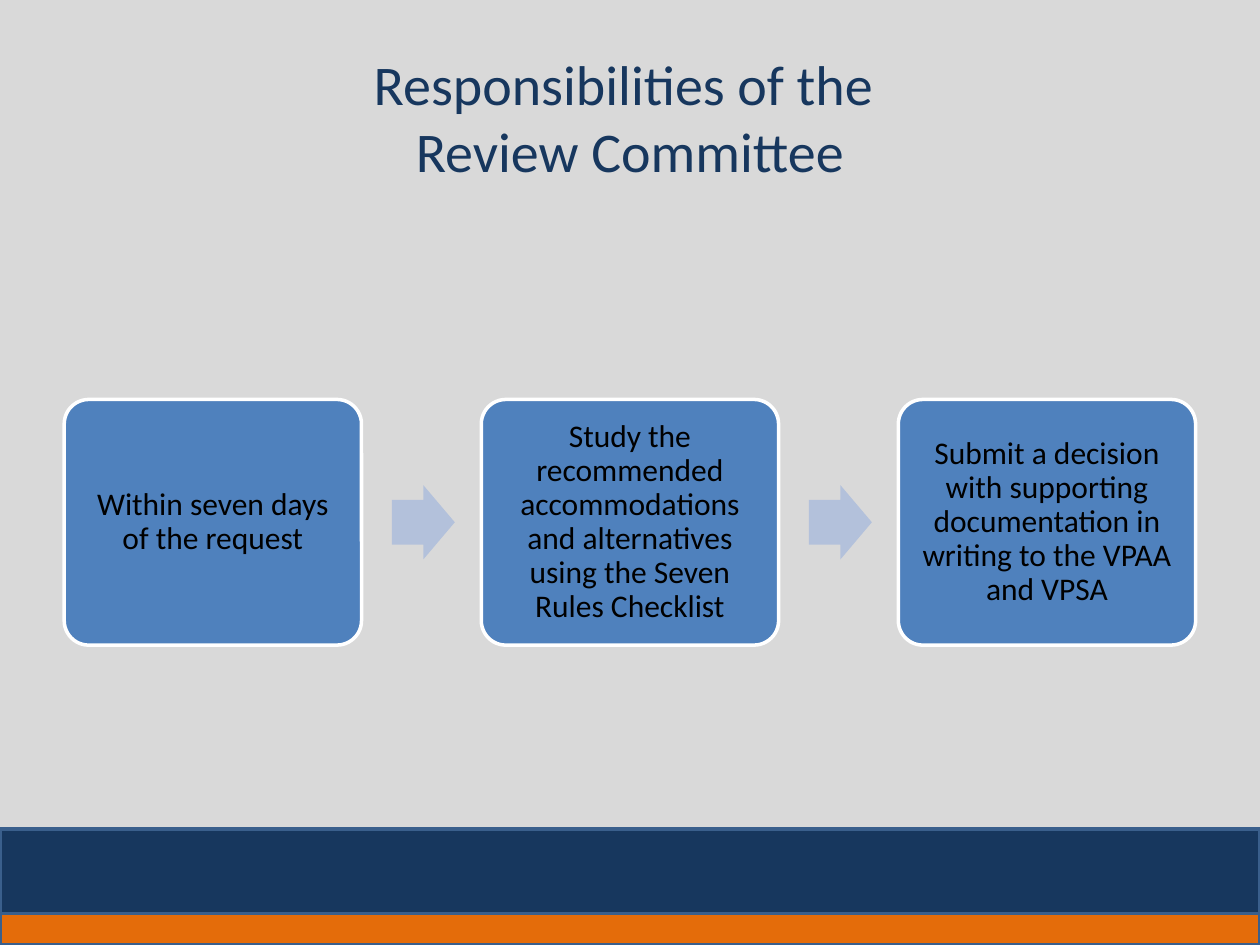
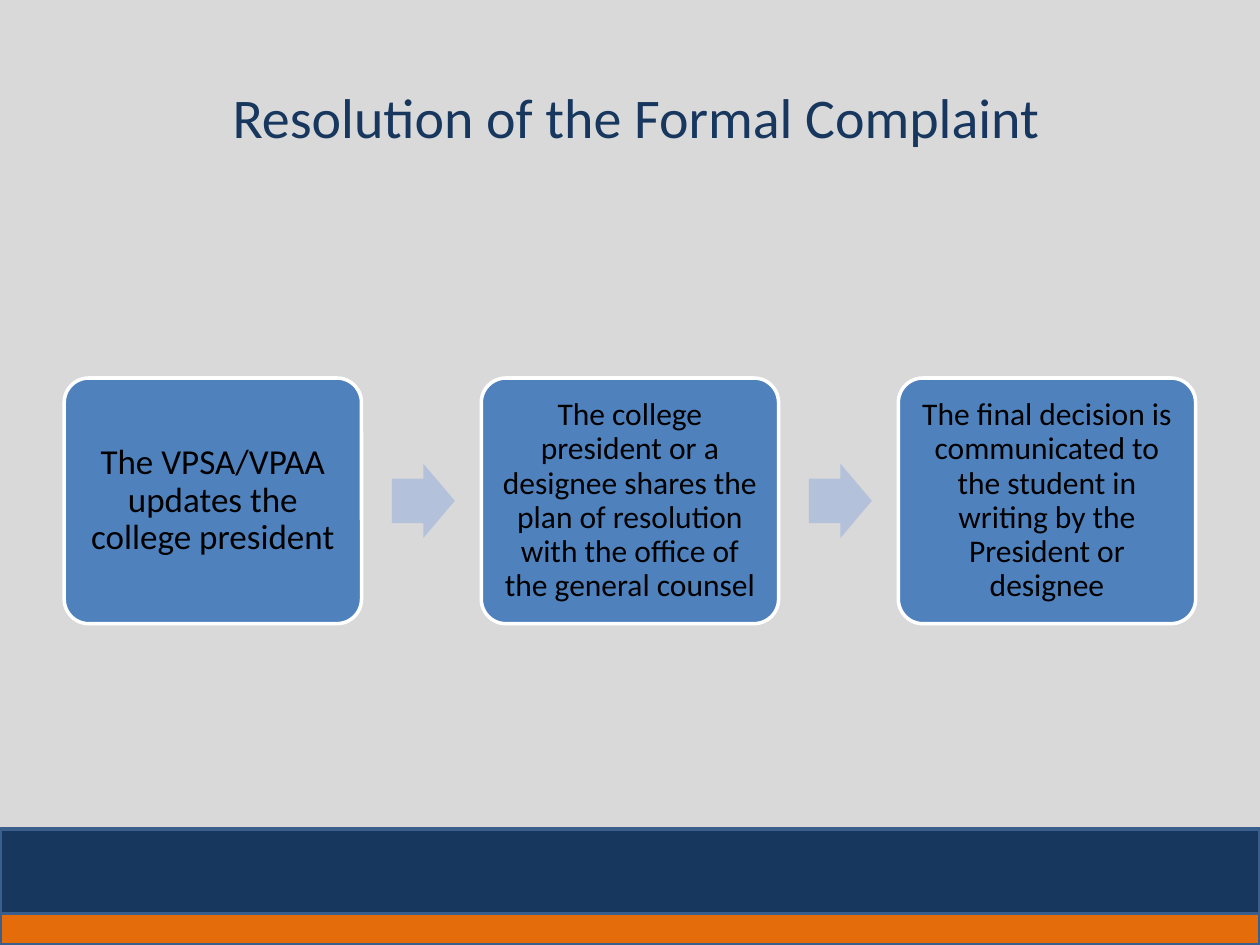
from pptx import Presentation
from pptx.dml.color import RGBColor
from pptx.enum.shapes import MSO_SHAPE
from pptx.enum.text import MSO_ANCHOR, MSO_AUTO_SIZE, PP_ALIGN
from pptx.util import Inches, Pt

GREY = RGBColor(0xD9, 0xD9, 0xD9)
NAVY = RGBColor(0x17, 0x37, 0x5E)
ORANGE = RGBColor(0xE4, 0x6C, 0x0A)
BAND_EDGE = RGBColor(0x3A, 0x5F, 0x8C)
STEP_BLUE = RGBColor(0x4F, 0x81, 0xBD)
ARROW_BLUE = RGBColor(0xB3, 0xC1, 0xDB)
WHITE = RGBColor(0xFF, 0xFF, 0xFF)
BLACK = RGBColor(0x00, 0x00, 0x00)

FONT = "Calibri"
TITLE_ONLY_LAYOUT = 5
SLIDE_WIDTH, SLIDE_HEIGHT = 10, 7.5
TITLE_BOX = (0.5, 0.3, 9, 1.25)
FOOTER_BOX = (0, 6.58, SLIDE_WIDTH, 0.92)
NAVY_BAND_HEIGHT = 0.67
FLOW_LEFT, FLOW_WIDTH = 0.51, 8.98
STEP_WIDTH, STEP_HEIGHT = 2.36, 1.95
ARROW_WIDTH, ARROW_HEIGHT, ARROW_GAP = 0.5, 0.59, 0.24

SLIDES = [
    ("Responsibilities of the \vReview Committee", 3.17, [
        ("Within seven days of the request", 18),
        ("Study the recommended accommodations and alternatives "
         "using the Seven Rules Checklist", 18),
        ("Submit a decision with supporting documentation in writing "
         "to the VPAA and VPSA", 18),
    ]),
    (" Resolution of the Formal Complaint", 3, [
        ("The VPSA/VPAA updates the college president", 20),
        ("The college president or a designee shares the plan of resolution "
         "with the office of the general counsel", 18),
        ("The final decision is communicated to the student in writing "
         "by the President or designee", 18),
    ]),
]


def add_filled_shape(slide, kind, box, fill, edge=None):
    """Add a flat preset shape, outlined only when an edge colour is given."""
    shape = slide.shapes.add_shape(kind, *map(Inches, box))
    shape.shadow.inherit = False
    shape.fill.solid()
    shape.fill.fore_color.rgb = fill
    if edge is None:
        shape.line.fill.background()
    else:
        shape.line.color.rgb = edge
        shape.line.width = Pt(2)
    return shape


def format_text(text_frame, text, size, color):
    """Write centred text in the shared font."""
    text_frame.text = text
    text_frame.word_wrap = True
    text_frame.auto_size = MSO_AUTO_SIZE.NONE
    text_frame.vertical_anchor = MSO_ANCHOR.MIDDLE
    paragraph = text_frame.paragraphs[0]
    paragraph.alignment = PP_ALIGN.CENTER
    paragraph.font.name = FONT
    paragraph.font.size = Pt(size)
    paragraph.font.color.rgb = color
    return paragraph


def add_footer(slide, box):
    """Draw the orange footer with the navy band over its upper part."""
    left, top, width, _ = box
    add_filled_shape(slide, MSO_SHAPE.RECTANGLE, box, ORANGE, BAND_EDGE)
    navy_box = (left, top, width, NAVY_BAND_HEIGHT)
    add_filled_shape(slide, MSO_SHAPE.RECTANGLE, navy_box, NAVY, BAND_EDGE)


def add_title(slide, box, text):
    """Place and format the title placeholder."""
    title = slide.shapes.title
    title.left, title.top, title.width, title.height = map(Inches, box)
    format_text(title.text_frame, text, 32, NAVY)


def add_step(slide, box, text, size):
    """Draw one rounded step of the process."""
    step = add_filled_shape(slide, MSO_SHAPE.ROUNDED_RECTANGLE, box, STEP_BLUE, WHITE)
    step.adjustments[0] = 0.1
    text_frame = step.text_frame
    margin = Inches(size / 250)
    text_frame.margin_left = text_frame.margin_right = margin
    text_frame.margin_top = text_frame.margin_bottom = margin
    format_text(text_frame, text, size, BLACK).line_spacing = 0.9


def add_arrow(slide, box):
    """Draw the arrow between two steps."""
    arrow = add_filled_shape(slide, MSO_SHAPE.RIGHT_ARROW, box, ARROW_BLUE)
    arrow.adjustments[0] = 0.6
    arrow.adjustments[1] = 0.5


def add_process(slide, box, steps):
    """Spread the steps evenly across the box with arrows between them."""
    left, top, width, height = box
    pitch = (width - STEP_WIDTH) / (len(steps) - 1)
    arrow_top = top + (height - ARROW_HEIGHT) / 2
    for index, (text, size) in enumerate(steps):
        step_left = left + index * pitch
        if index:
            arrow_left = step_left - pitch + STEP_WIDTH + ARROW_GAP
            add_arrow(slide, (arrow_left, arrow_top, ARROW_WIDTH, ARROW_HEIGHT))
        add_step(slide, (step_left, top, STEP_WIDTH, height), text, size)


def add_process_slide(presentation, title, process_top, steps):
    """Add a slide with a title, a process and the shared footer."""
    slide = presentation.slides.add_slide(presentation.slide_layouts[TITLE_ONLY_LAYOUT])
    add_footer(slide, FOOTER_BOX)
    add_title(slide, TITLE_BOX, title)
    add_process(slide, (FLOW_LEFT, process_top, FLOW_WIDTH, STEP_HEIGHT), steps)


def main():
    """Build and save the presentation."""
    presentation = Presentation()
    presentation.slide_width = Inches(SLIDE_WIDTH)
    presentation.slide_height = Inches(SLIDE_HEIGHT)
    background = presentation.slide_master.background.fill
    background.solid()
    background.fore_color.rgb = GREY
    for title, process_top, steps in SLIDES:
        add_process_slide(presentation, title, process_top, steps)
    presentation.save("out.pptx")


if __name__ == "__main__":
    main()
